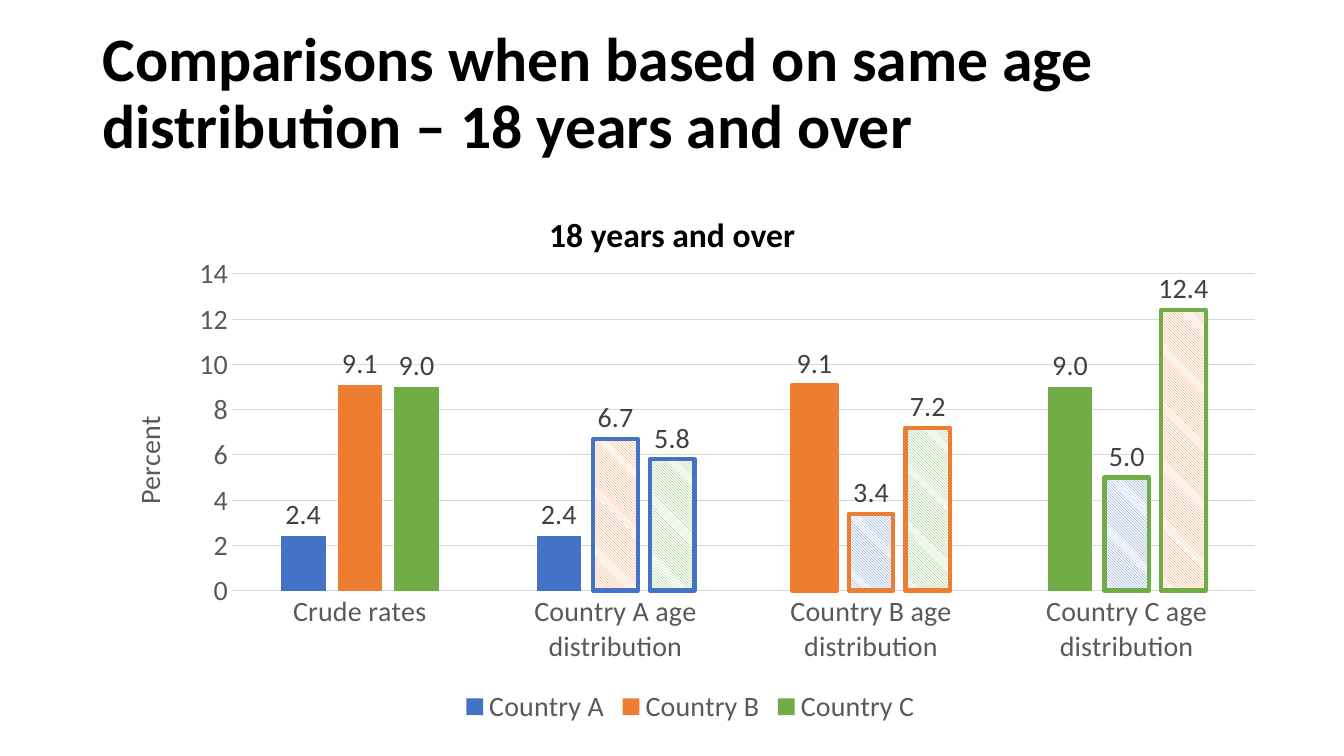
import pptx
import pptx.chart.data
import pptx.dml.color
import pptx.enum.chart
import pptx.enum.dml
import pptx.enum.text
import pptx.oxml
import pptx.util
from pptx.util import Cm, Pt

RGBColor = pptx.dml.color.RGBColor
BLACK = RGBColor(0x00, 0x00, 0x00)
WHITE = RGBColor(0xFF, 0xFF, 0xFF)
LABEL_GRAY = RGBColor(0x40, 0x40, 0x40)
AXIS_GRAY = RGBColor(0x59, 0x59, 0x59)
GRID_GRAY = RGBColor(0xD9, 0xD9, 0xD9)
BLUE = RGBColor(0x44, 0x72, 0xC4)
ORANGE = RGBColor(0xED, 0x7D, 0x31)
GREEN = RGBColor(0x70, 0xAD, 0x47)
FONT = "Calibri"


def set_font(font, size, color, bold=False):
    font.name = FONT
    font.size = Pt(size)
    font.bold = bold
    font.color.rgb = color


def add_text(s, text, box, size, anchor, align, spacing):
    sp = s.shapes.add_textbox(*[Cm(v) for v in box])
    tf = sp.text_frame
    tf.word_wrap = True
    tf.vertical_anchor = anchor
    p = tf.paragraphs[0]
    p.alignment = align
    p.line_spacing = spacing
    r = p.add_run()
    r.text = text
    set_font(r.font, size, BLACK, True)


prs = pptx.Presentation()
prs.slide_width = Cm(33.87)
prs.slide_height = Cm(19.05)
s = prs.slides.add_slide(prs.slide_layouts[6])

ANCHOR = pptx.enum.text.MSO_ANCHOR
ALIGN = pptx.enum.text.PP_ALIGN
add_text(s, "Comparisons when based on same age distribution – 18 years and over",
         (2.33, 0.56, 29.21, 3.68), 44.1, ANCHOR.MIDDLE, ALIGN.LEFT, 0.9)
add_text(s, "18 years and over", (12.04, 5.26, 9.8, 2.31), 24,
         ANCHOR.TOP, ALIGN.CENTER, 1.0)

data = pptx.chart.data.CategoryChartData(number_format="0.0")
data.categories = ["Crude rates"] + [f"Country {c} age distribution" for c in "ABC"]
data.add_series("Country A", (2.4, 2.4, 9.1, 9.0))
data.add_series("Country B", (9.1, 6.7, 3.4, 5.0))
data.add_series("Country C", (9.0, 5.8, 7.2, 12.4))
chart = s.shapes.add_chart(
    pptx.enum.chart.XL_CHART_TYPE.COLUMN_CLUSTERED,
    Cm(2.59), Cm(6.3), Cm(29.62), Cm(12.09), data).chart
chart.has_title = False
set_font(chart.font, 20, BLACK)

chart.has_legend = True
chart.legend.position = pptx.enum.chart.XL_LEGEND_POSITION.BOTTOM
chart.legend.include_in_layout = False
set_font(chart.legend.font, 20, AXIS_GRAY)

cat_axis, val_axis = chart.category_axis, chart.value_axis
for axis in (cat_axis, val_axis):
    axis.major_tick_mark = pptx.enum.chart.XL_TICK_MARK.NONE
    axis.minor_tick_mark = pptx.enum.chart.XL_TICK_MARK.NONE
    set_font(axis.tick_labels.font, 20, AXIS_GRAY)
cat_axis.format.line.color.rgb = GRID_GRAY
cat_axis.format.line.width = Pt(0.75)
val_axis.format.line.fill.background()
val_axis.minimum_scale = 0
val_axis.maximum_scale = 14
val_axis.major_unit = 2
val_axis.tick_labels.number_format = "0"
val_axis.tick_labels.number_format_is_linked = False
val_axis.major_gridlines.format.line.color.rgb = GRID_GRAY
val_axis.major_gridlines.format.line.width = Pt(0.75)
val_axis.has_title = True
r = val_axis.axis_title.text_frame.paragraphs[0].add_run()
r.text = "Percent"
set_font(r.font, 20, AXIS_GRAY)

plot = chart.plots[0]
plot.gap_width = 219
plot.overlap = -27
plot.vary_by_categories = False
for series, color in zip(plot.series, (BLUE, ORANGE, GREEN)):
    series.invert_if_negative = False
    series.format.fill.solid()
    series.format.fill.fore_color.rgb = color
    labels = series.data_labels
    labels.show_value = True
    labels.number_format = "0.0"
    labels.number_format_is_linked = False
    labels.position = pptx.enum.chart.XL_LABEL_POSITION.OUTSIDE_END
    set_font(labels.font, 20, LABEL_GRAY)

# series, category, fill, border, hatched
points = [
    (0, 2, ORANGE, ORANGE, False),
    (0, 3, GREEN, None, False),
    (1, 1, ORANGE, BLUE, True),
    (1, 2, BLUE, ORANGE, True),
    (1, 3, BLUE, GREEN, True),
    (2, 1, GREEN, BLUE, True),
    (2, 2, GREEN, ORANGE, True),
    (2, 3, ORANGE, GREEN, True),
]
for series_no, cat_no, color, border, hatched in points:
    fmt = plot.series[series_no].points[cat_no].format
    if hatched:
        fmt.fill.patterned()
        fmt.fill.pattern = pptx.enum.dml.MSO_PATTERN.DARK_DOWNWARD_DIAGONAL
        fmt.fill.back_color.rgb = WHITE
    else:
        fmt.fill.solid()
    fmt.fill.fore_color.rgb = color
    if border:
        fmt.line.color.rgb = border
        fmt.line.width = Pt(3)

plot_area = chart._chartSpace.chart.plotArea
for old in plot_area.xpath("c:layout"):
    plot_area.remove(old)
plot_area.insert(0, pptx.oxml.parse_xml(
    '<c:layout xmlns:c="http://schemas.openxmlformats.org/drawingml/2006/chart">'
    '<c:manualLayout><c:layoutTarget val="inner"/>'
    '<c:xMode val="edge"/><c:yMode val="edge"/>'
    '<c:x val="0.11"/><c:y val="0.05"/><c:w val="0.87"/><c:h val="0.66"/>'
    '</c:manualLayout></c:layout>'))

prs.save("out.pptx")
